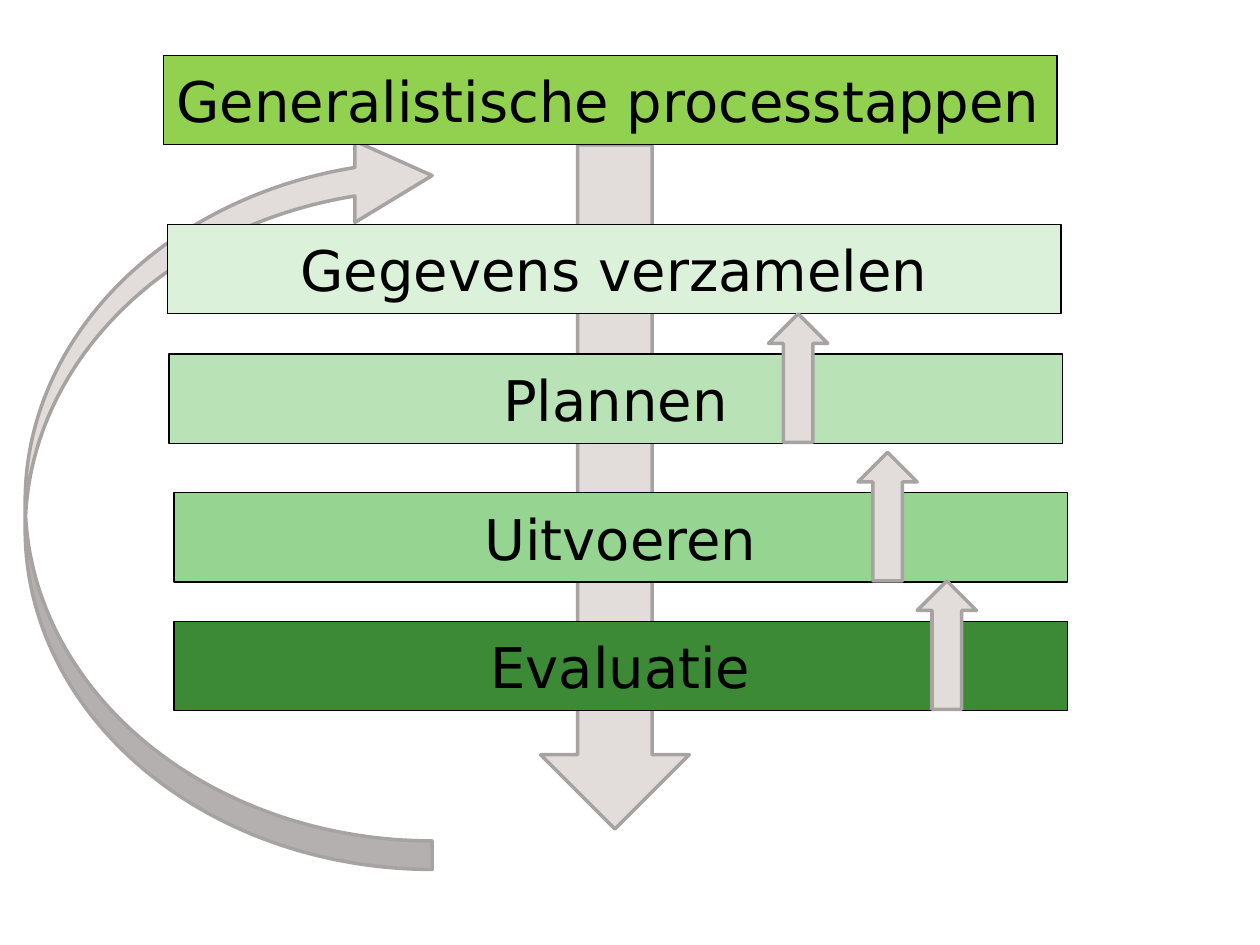
"""Build the slide with the generalist process steps."""
from dataclasses import dataclass

from pptx import Presentation
from pptx.dml.color import RGBColor
from pptx.enum.shapes import MSO_SHAPE
from pptx.enum.text import MSO_ANCHOR, MSO_AUTO_SIZE, PP_ALIGN
from pptx.util import Emu, Pt

RECTANGLE = MSO_SHAPE.RECTANGLE
DOWN_ARROW = MSO_SHAPE.DOWN_ARROW
UP_ARROW = MSO_SHAPE.UP_ARROW
CURVED_ARROW = MSO_SHAPE.CURVED_LEFT_ARROW
TOP = MSO_ANCHOR.TOP
NO_AUTOFIT = MSO_AUTO_SIZE.NONE
LEFT, CENTER = PP_ALIGN.LEFT, PP_ALIGN.CENTER

EMU_PER_PX = 9144
TITLE_ONLY = 5
BAR_WIDTH, BAR_HEIGHT = 709, 71
UP_WIDTH, UP_HEIGHT, UP_RISE = 47, 102, 32

STEPS = [
    ("Gegevens verzamelen", 133, 178, "DCF1DA"),
    ("Plannen", 134, 281, "B9E3B6"),
    ("Uitvoeren", 138, 391, "96D491"),
    ("Evaluatie", 138, 493, "3C8A36"),
]
UP_ARROW_LEFTS = [610, 681, 728]


@dataclass(frozen=True)
class Theme:
    """Colours, font and sizes of the slide."""
    font: str = "DejaVu Sans"
    text_size: float = 32
    text: str = "000000"
    title_fill: str = "92D050"
    bar_line: str = "000000"
    bar_line_width: float = 0.75
    arrow_fill: str = "E2DDDB"
    arrow_line: str = "A7A3A2"
    arrow_line_width: float = 2


def px(length):
    """Turn px into EMU."""
    return Emu(length * EMU_PER_PX)


class ProcessSlide:
    """Draws the elements of one slide in one theme."""

    def __init__(self, slide, theme):
        """Keep the slide and its theme."""
        self.slide = slide
        self.theme = theme

    def paint(self, shape, fill, line, width):
        """Give a shape its fill and outline."""
        shape.fill.solid()
        shape.fill.fore_color.rgb = RGBColor.from_string(fill)
        shape.line.color.rgb = RGBColor.from_string(line)
        shape.line.width = Pt(width)

    def label(self, shape, text, align):
        """Write one line of text in a bar."""
        frame = shape.text_frame
        frame.text = text
        frame.word_wrap = True
        frame.auto_size = NO_AUTOFIT
        frame.vertical_anchor = TOP
        frame.margin_left = frame.margin_right = px(10)
        frame.margin_top, frame.margin_bottom = px(9), px(0)
        para = frame.paragraphs[0]
        para.alignment = align
        font = para.runs[0].font
        font.name = self.theme.font
        font.size = Pt(self.theme.text_size)
        font.color.rgb = RGBColor.from_string(self.theme.text)

    def style_bar(self, shape, text, fill, align):
        """Paint and label a bar."""
        self.paint(shape, fill, self.theme.bar_line, self.theme.bar_line_width)
        self.label(shape, text, align)

    def title(self, text, left, top):
        """Place the title bar in front of what is drawn so far."""
        title = self.slide.shapes.title
        title.left, title.top = px(left), px(top)
        title.width, title.height = px(BAR_WIDTH), px(BAR_HEIGHT)
        self.style_bar(title, text, self.theme.title_fill, LEFT)
        title.element.getparent().append(title.element)

    def bar(self, text, left, top, fill):
        """Add one process step."""
        bar = self.slide.shapes.add_shape(
            RECTANGLE, px(left), px(top), px(BAR_WIDTH), px(BAR_HEIGHT))
        bar.shadow.inherit = False
        self.style_bar(bar, text, fill, CENTER)

    def arrow(self, kind, left, top, width, height, rotation=0, adjustments=()):
        """Add a block arrow."""
        arrow = self.slide.shapes.add_shape(
            kind, px(left), px(top), px(width), px(height))
        arrow.shadow.inherit = False
        arrow.rotation = rotation
        for index, value in enumerate(adjustments):
            arrow.adjustments[index] = value
        theme = self.theme
        self.paint(arrow, theme.arrow_fill, theme.arrow_line, theme.arrow_line_width)


def main():
    """Build and save the deck."""
    deck = Presentation()
    deck.slide_width, deck.slide_height = px(1000), px(750)
    page = ProcessSlide(
        deck.slides.add_slide(deck.slide_layouts[TITLE_ONLY]), Theme())

    page.arrow(CURVED_ARROW, 20, 107, 323, 583, 180, (0.07, 0.2, 0.19))
    page.arrow(DOWN_ARROW, 429, 115, 118, 543)
    page.title("Generalistische processtappen", 130, 44)
    for step in STEPS:
        page.bar(*step)
    for left, (_, _, top, _) in zip(UP_ARROW_LEFTS, STEPS[1:]):
        page.arrow(UP_ARROW, left, top - UP_RISE, UP_WIDTH, UP_HEIGHT)

    deck.save("out.pptx")


if __name__ == "__main__":
    main()
